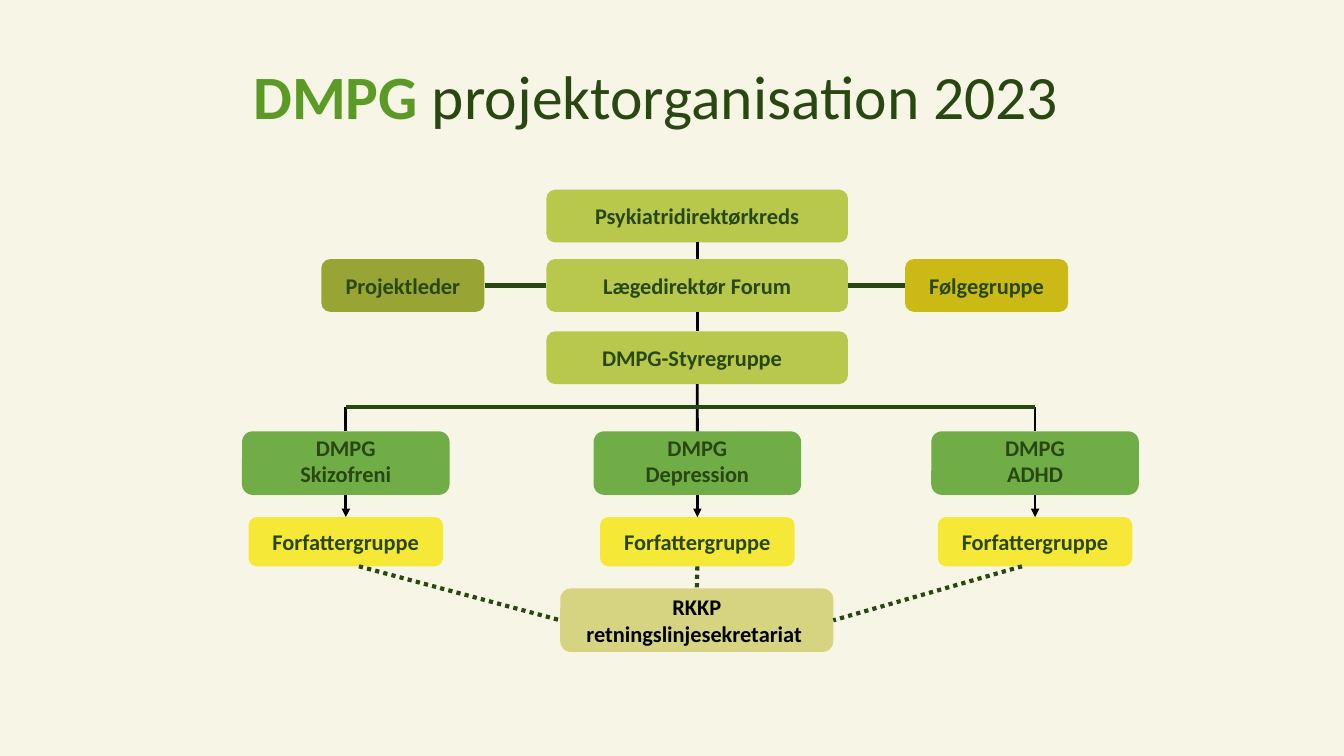
from lxml import etree
from pptx import Presentation
from pptx.dml.color import RGBColor
from pptx.enum.dml import MSO_LINE
from pptx.enum.shapes import MSO_CONNECTOR, MSO_SHAPE
from pptx.enum.text import MSO_ANCHOR, PP_ALIGN
from pptx.oxml.ns import qn
from pptx.util import Cm, Pt

STRAIGHT = MSO_CONNECTOR.STRAIGHT
ROUNDED = MSO_SHAPE.ROUNDED_RECTANGLE
DOTTED = MSO_LINE.ROUND_DOT
MIDDLE = MSO_ANCHOR.MIDDLE
CENTER = PP_ALIGN.CENTER
TOP, LEFT, BOTTOM, RIGHT = range(4)

FONT = "Calibri"
COLORS = {
    "background": "F7F6E6",
    "dark": "294711",
    "black": "000000",
    "accent": "5A9A25",
    "spine": "B8C84D",
    "leader": "98A535",
    "followers": "CBB916",
    "department": "70AD47",
    "authors": "F6E836",
    "secretariat": "D7D481",
}


def color(name):
    return RGBColor.from_string(COLORS[name])


def add_run(paragraph, text, size, color_name, bold):
    run = paragraph.add_run()
    run.text = text
    run.font.name = FONT
    run.font.size = Pt(size)
    run.font.bold = bold
    run.font.color.rgb = color(color_name)


def add_node(slide, box, lines, fill, text_color="dark"):
    shape = slide.shapes.add_shape(ROUNDED, *map(Cm, box))
    shape.shadow.inherit = False
    shape.fill.solid()
    shape.fill.fore_color.rgb = color(fill)
    shape.line.fill.background()
    frame = shape.text_frame
    frame.word_wrap = True
    frame.vertical_anchor = MIDDLE
    for index, line in enumerate(lines):
        paragraph = frame.add_paragraph() if index else frame.paragraphs[0]
        paragraph.alignment = CENTER
        add_run(paragraph, line, 16, text_color, True)
    return shape


def add_line(slide, start, end, color_name="black", width=2, dash=None, arrow=False):
    connector = slide.shapes.add_connector(STRAIGHT, 0, 0, 0, 0)
    if len(start) == 2 and hasattr(start[0], "shape_id"):
        connector.begin_connect(*start)
    else:
        connector.begin_x, connector.begin_y = start
    if hasattr(end[0], "shape_id"):
        connector.end_connect(*end)
    else:
        connector.end_x, connector.end_y = end
    connector.line.color.rgb = color(color_name)
    connector.line.width = Pt(width)
    if dash:
        connector.line.dash_style = dash
    properties = connector._element.spPr
    if arrow:
        etree.SubElement(properties.find(qn("a:ln")), qn("a:tailEnd"), type="triangle")
    etree.SubElement(properties, qn("a:effectLst"))


def add_title(slide, box):
    frame = slide.shapes.add_textbox(*map(Cm, box)).text_frame
    frame.word_wrap = True
    frame.vertical_anchor = MIDDLE
    paragraph = frame.paragraphs[0]
    paragraph.alignment = CENTER
    paragraph.line_spacing = 0.9
    add_run(paragraph, "DMPG", 44, "accent", True)
    add_run(paragraph, " projektorganisation 2023", 44, "dark", False)


def add_leadership(slide, box):
    left, top, width, height = box
    node_height, spine_width, side_width = 1.33, 7.6, 4.11
    spine_left = left + 5.67
    middle_top = top + 1.75
    directors, forum, steering = [
        add_node(slide, (spine_left, node_top, spine_width, node_height), [label], "spine")
        for label, node_top in (
            ("Psykiatridirektørkreds", top),
            ("Lægedirektør Forum", middle_top),
            ("DMPG-Styregruppe  ", top + height - node_height),
        )
    ]
    leader = add_node(slide, (left, middle_top, side_width, node_height),
                      ["Projektleder"], "leader")
    followers = add_node(slide, (left + width - side_width, middle_top, side_width, node_height),
                         ["Følgegruppe"], "followers")
    add_line(slide, (directors, BOTTOM), (forum, TOP))
    add_line(slide, (forum, BOTTOM), (steering, TOP))
    add_line(slide, (leader, RIGHT), (forum, LEFT), "dark", 3)
    add_line(slide, (forum, RIGHT), (followers, LEFT), "dark", 3)
    return steering


def add_branch(slide, box, topic):
    left, top, width, height = box
    author_width, author_height = 4.9, 1.24
    department = add_node(slide, (left, top, width, 1.6), ["DMPG", topic], "department")
    department.text_frame.margin_top = 0
    authors = add_node(
        slide,
        (left + (width - author_width) / 2, top + height - author_height,
         author_width, author_height),
        ["Forfattergruppe"], "authors")
    add_line(slide, (department, BOTTOM), (authors, TOP), arrow=True)
    return department, authors


def add_distribution(slide, steering, departments, bar_top):
    first, middle, last = departments
    ends = [(shape.left + shape.width // 2, Cm(bar_top)) for shape in (first, last)]
    add_line(slide, (steering, BOTTOM), (middle, TOP))
    for end, department in zip(ends, (first, last)):
        add_line(slide, end, (department, TOP))
    add_line(slide, *ends, "dark", 3)


def add_secretariat(slide, box, author_groups):
    secretariat = add_node(slide, box, ["RKKP retningslinjesekretariat "],
                           "secretariat", "black")
    first, middle, last = author_groups
    add_line(slide, (middle, BOTTOM), (secretariat, TOP), "dark", 3, DOTTED)
    for group, shift, side in ((first, 0.33, LEFT), (last, -0.33, RIGHT)):
        start = (group.left + group.width // 2 + Cm(shift), group.top + group.height)
        add_line(slide, start, (secretariat, side), "dark", 3, DOTTED)


def main():
    presentation = Presentation()
    presentation.slide_width = Cm(33.87)
    presentation.slide_height = Cm(19.05)
    slide = presentation.slides.add_slide(presentation.slide_layouts[6])
    slide.background.fill.solid()
    slide.background.fill.fore_color.rgb = color("background")

    add_title(slide, (1.93, 1.45, 29.21, 2.13))
    steering = add_leadership(slide, (8.1, 4.78, 18.82, 4.9))
    branches = [
        add_branch(slide, (left, 10.87, 5.23, 3.4), topic)
        for left, topic in ((6.1, "Skizofreni"), (14.96, "Depression"), (23.47, "ADHD"))
    ]
    departments, author_groups = zip(*branches)
    add_distribution(slide, steering, departments, 10.26)
    add_secretariat(slide, (14.12, 14.83, 6.88, 1.6), author_groups)
    presentation.save("out.pptx")


if __name__ == "__main__":
    main()
